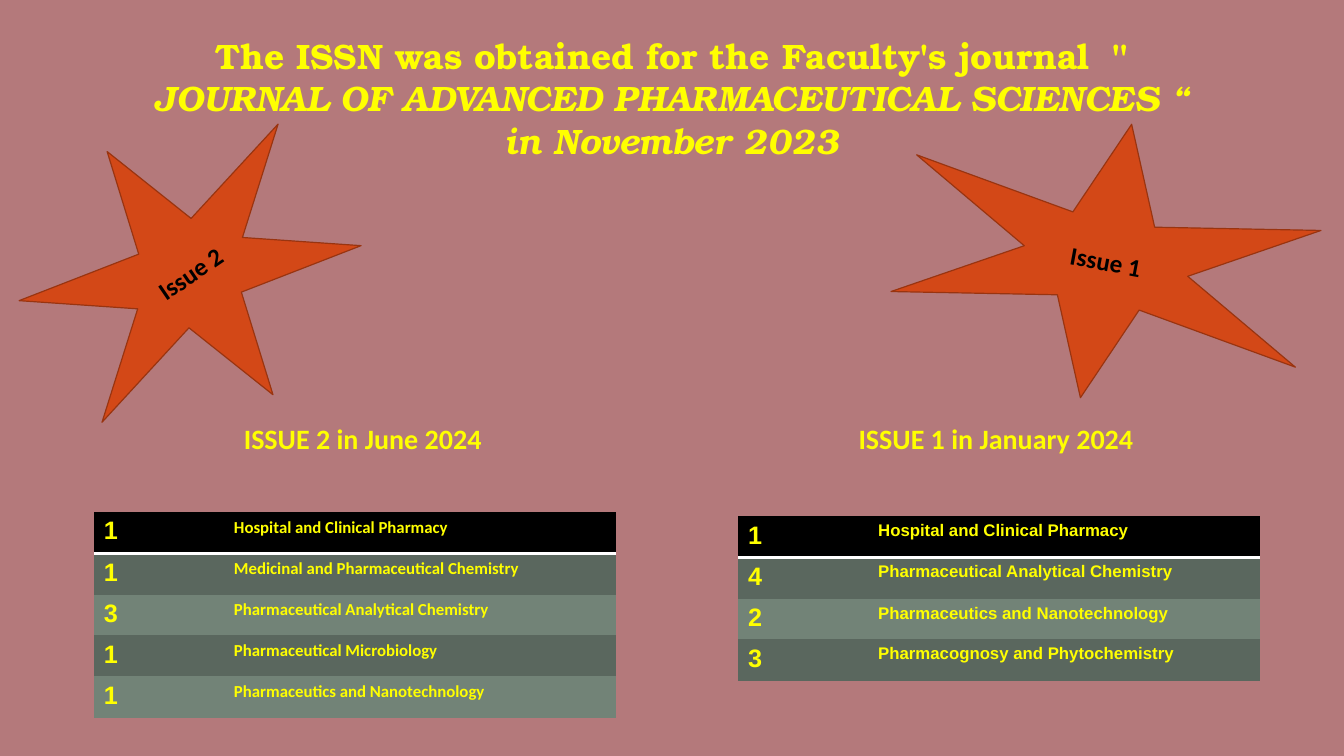
import dataclasses

import pptx
import pptx.dml.color
import pptx.enum.shapes
import pptx.enum.text
import pptx.oxml
import pptx.oxml.ns
import pptx.util

# Positions are percentages of the slide: a grid of 100 columns by 100 rows
WIDTH, HEIGHT = pptx.util.Inches(13.33), pptx.util.Inches(7.5)
YELLOW, BLACK, WHITE = "FFFF00", "000000", "FFFFFF"
BANDS = ("5A675E", "728377")
TABLE_COLS = (9.68, 29.18)
ROW, LOW_ROW, LOW_INDEX = 5.47, 3.33, 2
NO_STYLE = "{2D5ABB26-0587-4C30-8999-92F81FD0307C}"
CENTER = pptx.enum.text.PP_ALIGN.CENTER


@dataclasses.dataclass
class Box:
    x: float
    y: float
    w: float
    h: float

    def emu(self) -> tuple[int, int, int, int]:
        return col(self.x), row(self.y), col(self.w), row(self.h)


@dataclasses.dataclass
class Issue:
    number: int
    heading: str
    heading_box: Box
    star_box: Box
    angle: float
    table_x: float
    table_y: float
    field_font: str
    fields: list[tuple[int, str]]


TITLE_BOX = Box(6.15, 4.53, 87.7, 19.87)
TITLE = (
    ("The ISSN was obtained for the Faculty's journal  \"", False),
    ("JOURNAL OF ADVANCED PHARMACEUTICAL SCIENCES “", True),
    ("in November 2023", True),
)
ISSUES = (
    Issue(1, "ISSUE 1 in January 2024 ", Box(52.14, 54.67, 44.41, 42.53),
          Box(66.99, 16.13, 30.61, 36.8), 10.6, 54.91, 68.27, "Arial",
          [(1, "Hospital and Clinical Pharmacy"),
           (4, "Pharmaceutical Analytical Chemistry"),
           (2, "Pharmaceutics and Nanotechnology"),
           (3, "Pharmacognosy and Phytochemistry")]),
    Issue(2, "ISSUE 2 in June 2024 ", Box(5.03, 54.67, 44.41, 42.53),
          Box(2.48, 16.67, 23.33, 38.93), 325.7, 6.98, 67.73, "Calibri",
          [(1, "Hospital and Clinical Pharmacy"),
           (1, "Medicinal and Pharmaceutical Chemistry"),
           (3, "Pharmaceutical Analytical Chemistry"),
           (1, "Pharmaceutical Microbiology"),
           (1, "Pharmaceutics and Nanotechnology")]),
)


def col(share: float) -> int:
    return round(WIDTH * share / 100)


def row(share: float) -> int:
    return round(HEIGHT * share / 100)


def rgb(value: str) -> pptx.dml.color.RGBColor:
    return pptx.dml.color.RGBColor.from_string(value)


def set_font(p, name: str, size: float, color: str) -> None:
    p.font.name = name
    p.font.size = pptx.util.Pt(size)
    p.font.bold = True
    p.font.color.rgb = rgb(color)


def add_text(s, box: Box, name: str, size: float):
    """Add a centred yellow text box and return its paragraph."""
    tf = s.shapes.add_textbox(*box.emu()).text_frame
    tf.word_wrap = True
    tf.margin_left = tf.margin_right = tf.margin_top = tf.margin_bottom = 0
    p = tf.paragraphs[0]
    p.alignment = CENTER
    set_font(p, name, size, YELLOW)
    return p


def add_title(s) -> None:
    p = add_text(s, TITLE_BOX, "TeX Gyre Bonum", 25.2)
    for i, (line, italic) in enumerate(TITLE):
        if i:
            p.add_line_break()
        r = p.add_run()
        r.text = line
        r.font.italic = italic
        r.font.size = pptx.util.Pt(25.2)


def add_heading(s, issue: Issue) -> None:
    p = add_text(s, issue.heading_box, "Calibri", 20)
    p.line_spacing = 1.25
    p.add_run().text = issue.heading


def add_star(s, issue: Issue) -> None:
    sp = s.shapes.add_shape(
        pptx.enum.shapes.MSO_SHAPE.STAR_6_POINT, *issue.star_box.emu())
    sp.adjustments[0] = 0.175
    sp.rotation = issue.angle
    sp.shadow.inherit = False
    sp.fill.solid()
    sp.fill.fore_color.rgb = rgb("D34817")
    sp.line.color.rgb = rgb("993410")
    sp.line.width = pptx.util.Pt(0.85)
    tf = sp.text_frame
    tf.vertical_anchor = pptx.enum.text.MSO_ANCHOR.MIDDLE
    p = tf.paragraphs[0]
    p.text = f"Issue {issue.number}"
    p.alignment = CENTER
    set_font(p, "Calibri", 18, BLACK)


def underline_cell(cell) -> None:
    """Draw a white bottom border; it must precede the fill."""
    border = pptx.oxml.parse_xml(
        f'<a:lnB {pptx.oxml.ns.nsdecls("a")} w="{pptx.util.Pt(2)}">'
        f'<a:solidFill><a:srgbClr val="{WHITE}"/></a:solidFill></a:lnB>')
    cell._tc.get_or_add_tcPr().insert(0, border)


def add_fields_table(s, issue: Issue) -> None:
    heights = [LOW_ROW if i == LOW_INDEX else ROW for i in range(len(issue.fields))]
    box = Box(issue.table_x, issue.table_y, sum(TABLE_COLS), sum(heights))
    frame = s.shapes.add_table(len(heights), len(TABLE_COLS), *box.emu())
    table = frame.table
    table._tbl.tblPr.find(pptx.oxml.ns.qn("a:tableStyleId")).text = NO_STYLE
    for column, width in zip(table.columns, TABLE_COLS):
        column.width = col(width)
    for i, (count, field) in enumerate(issue.fields):
        table.rows[i].height = row(heights[i])
        styles = ((str(count), "Arial", 18), (field, issue.field_font, 12))
        for j, (text, name, size) in enumerate(styles):
            cell = table.cell(i, j)
            cell.fill.solid()
            cell.fill.fore_color.rgb = rgb(BANDS[(i - 1) % 2] if i else BLACK)
            p = cell.text_frame.paragraphs[0]
            p.text = text
            set_font(p, name, size, YELLOW)
            if i == 0:
                underline_cell(cell)


def main() -> None:
    prs = pptx.Presentation()
    prs.slide_width, prs.slide_height = WIDTH, HEIGHT
    s = prs.slides.add_slide(prs.slide_layouts[6])
    s.background.fill.solid()
    s.background.fill.fore_color.rgb = rgb("B4797B")

    # Title, then one half of the slide per issue
    add_title(s)
    for issue in ISSUES:
        add_fields_table(s, issue)
        add_heading(s, issue)
        add_star(s, issue)
    prs.save("out.pptx")


if __name__ == "__main__":
    main()
